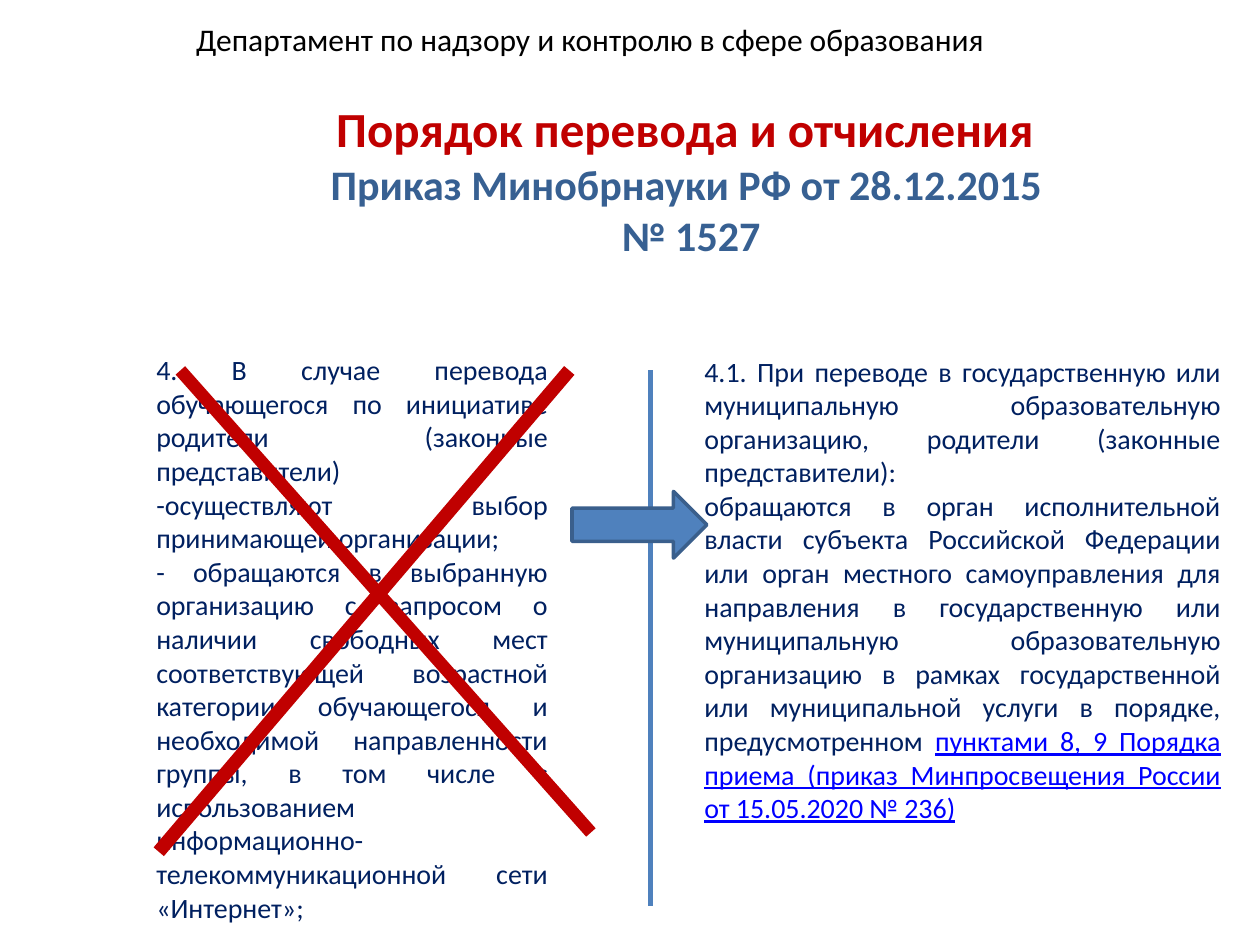
from dataclasses import dataclass

from lxml import etree
from pptx import Presentation
from pptx import util as u
from pptx.dml.color import RGBColor
from pptx.enum import shapes, text
from pptx.oxml.ns import qn

COLUMNS, ROWS = 100, 75
CELL = u.Inches(10) / COLUMNS
RIGHT, CENTER, JUSTIFY = text.PP_ALIGN.RIGHT, text.PP_ALIGN.CENTER, text.PP_ALIGN.JUSTIFY


@dataclass(frozen=True)
class Theme:
    """Colours, font and type sizes of the slide."""
    font: str = "Calibri"
    black: str = "000000"
    red: str = "C00000"
    subtitle: str = "376092"
    body: str = "002060"
    reference: str = "0000FF"
    accent: str = "4F81BD"
    accent_edge: str = "3A5F8C"
    department_size: int = 18
    title_size: int = 28
    order_size: int = 24
    body_size: int = 16


@dataclass(frozen=True)
class Box:
    """A region of the slide in grid columns and rows."""
    col: float
    row: float
    cols: float
    rows: float

    def within(self, col, row, cols, rows):
        """Return a box offset from this one's corner."""
        return Box(self.col + col, self.row + row, cols, rows)

    def lengths(self):
        """Return left, top, width and height in EMU."""
        return [round(n * CELL) for n in (self.col, self.row, self.cols, self.rows)]

    def point(self, across, down):
        """Return a point given as shares of the box, in EMU."""
        left, top, width, height = self.lengths()
        return round(left + across * width), round(top + down * height)


THEME = Theme()


def write(holder, box, paragraphs, size, color, align, bold=False):
    """Place a text holder and fill it with paragraphs of (words, reference) runs."""
    holder.left, holder.top, holder.width, holder.height = box.lengths()
    frame = holder.text_frame
    frame.word_wrap = True
    frame.auto_size = text.MSO_AUTO_SIZE.NONE
    frame.vertical_anchor = text.MSO_ANCHOR.TOP
    for index, runs in enumerate(paragraphs):
        paragraph = frame.paragraphs[0] if index == 0 else frame.add_paragraph()
        properties = paragraph._p.get_or_add_pPr()
        properties.set("marL", "0")
        properties.set("indent", "0")
        etree.SubElement(properties, qn("a:buNone"))
        paragraph.alignment = align
        paragraph.space_before = u.Pt(0)
        for words, reference in runs:
            run = paragraph.add_run()
            run.text = words
            run.font.name = THEME.font
            run.font.size = u.Pt(size)
            run.font.bold = bold
            run.font.color.rgb = RGBColor.from_string(THEME.reference if reference else color)
            if reference:
                run.font.underline = True


def draw_line(slide, start, end, color, width):
    """Draw a straight line without a shadow."""
    line = slide.shapes.add_connector(shapes.MSO_CONNECTOR.STRAIGHT, *start, *end)
    line.line.color.rgb = RGBColor.from_string(color)
    line.line.width = u.Pt(width)
    etree.SubElement(line._element.spPr, qn("a:effectLst"))


def add_header(slide, box):
    """Place the department, the title and the order it rests on."""
    department = slide.shapes.add_textbox(0, 0, 0, 0)
    write(department, box.within(0, 0, 66.1, 4.9),
          [[("Департамент по надзору и контролю в сфере образования", False)]],
          THEME.department_size, THEME.black, RIGHT)
    write(slide.shapes.title, box.within(6.3, 6.2, 70.1, 5.7),
          [[("Порядок перевода и отчисления", False)]],
          THEME.title_size, THEME.red, CENTER, bold=True)
    order = slide.shapes.add_textbox(0, 0, 0, 0)
    write(order, box.within(2.1, 11, 79.5, 9.1),
          [[("Приказ Минобрнауки РФ от 28.12.2015 ", False)], [("№ 1527", False)]],
          THEME.order_size, THEME.subtitle, CENTER, bold=True)


def add_rule(holder, box, paragraphs):
    """Place the wording of one version of the rule."""
    write(holder, box, paragraphs, THEME.body_size, THEME.body, JUSTIFY)


def add_transition(slide, box):
    """Draw the divider and the arrow from the old rule to the new one."""
    draw_line(slide, box.point(0.58, 0), box.point(0.58, 1), THEME.accent, 3)
    arrow = slide.shapes.add_shape(shapes.MSO_SHAPE.RIGHT_ARROW,
                                   *box.within(0, 9.6, box.cols, 5.3).lengths())
    arrow.shadow.inherit = False
    arrow.fill.solid()
    arrow.fill.fore_color.rgb = RGBColor.from_string(THEME.accent)
    arrow.line.color.rgb = RGBColor.from_string(THEME.accent_edge)
    arrow.line.width = u.Pt(2)


def add_cross(slide, box):
    """Strike out the old rule with two diagonals."""
    draw_line(slide, box.point(0.95, 0), box.point(0, 1), THEME.red, 7.75)
    draw_line(slide, box.point(0.05, 0), box.point(1, 0.96), THEME.red, 7.25)


def main():
    """Build and save the slide."""
    deck = Presentation()
    deck.slide_width, deck.slide_height = round(COLUMNS * CELL), round(ROWS * CELL)
    slide = deck.slides.add_slide(deck.slide_layouts.get_by_name("Two Content"))
    old_rule = [
        [("4. В случае перевода обучающегося по инициативе родители "
          "(законные представители) ", False)],
        [("-осуществляют выбор принимающей организации;", False)],
        [("- обращаются в выбранную организацию с запросом о наличии свободных мест "
          "соответствующей возрастной категории обучающегося и необходимой "
          "направленности группы, в том числе с использованием "
          "информационно-телекоммуникационной сети «Интернет»;", False)],
    ]
    new_rule = [
        [("4.1. При переводе в государственную или муниципальную образовательную "
          "организацию, родители (законные представители):", False)],
        [("обращаются в орган исполнительной власти субъекта Российской Федерации или "
          "орган местного самоуправления для направления в государственную или "
          "муниципальную образовательную организацию в рамках государственной или "
          "муниципальной услуги в порядке, предусмотренном ", False),
         ("пунктами 8, 9 Порядка приема (приказ Минпросвещения России "
          "от 15.05.2020 № 236)", True)],
    ]
    add_header(slide, Box(13, 1.1, 81.6, 20.1))
    add_rule(slide.placeholders[1], Box(11.4, 27.5, 33.1, 46.8), old_rule)
    add_rule(slide.placeholders[2], Box(54.9, 27.6, 43, 38.7), new_rule)
    add_transition(slide, Box(45.4, 29.4, 10.7, 42.5))
    add_cross(slide, Box(12.6, 29.4, 34.3, 38.2))
    deck.save("out.pptx")


if __name__ == "__main__":
    main()
